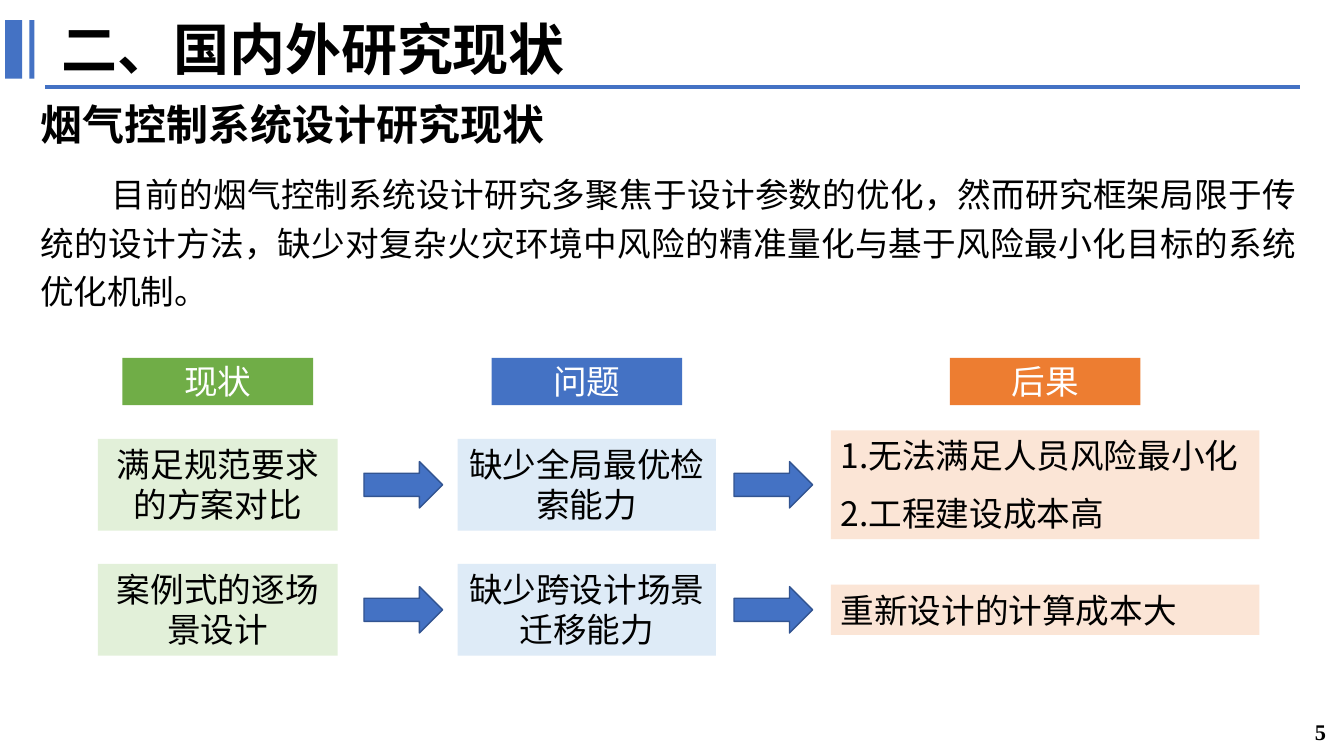
from lxml.etree import SubElement
from pptx import Presentation
from pptx.dml.color import RGBColor
from pptx.enum.shapes import MSO_CONNECTOR, MSO_SHAPE
from pptx.enum.text import MSO_ANCHOR, PP_ALIGN
from pptx.oxml.ns import qn
from pptx.util import Inches, Pt

TITLE = "二、国内外研究现状"
HEADING = "烟气控制系统设计研究现状"
BODY = "目前的烟气控制系统设计研究多聚焦于设计参数的优化，然而研究框架局限于传统的设计方法，缺少对复杂火灾环境中风险的精准量化与基于风险最小化目标的系统优化机制。"
PAGE_NUMBER = "5"
COLUMNS = [
    {"label": "现状", "left": 0.97, "width": 2.38, "strong": "green", "pale": "pale_green",
     "align": PP_ALIGN.CENTER, "rows": [["满足规范要求的方案对比"], ["案例式的逐场景设计"]]},
    {"label": "问题", "left": 4.54, "width": 2.56, "strong": "blue", "pale": "pale_blue",
     "align": PP_ALIGN.CENTER, "rows": [["缺少全局最优检索能力"], ["缺少跨设计场景迁移能力"]]},
    {"label": "后果", "left": 8.24, "width": 4.25, "strong": "orange", "pale": "pale_orange",
     "align": PP_ALIGN.JUSTIFY,
     "rows": [["1.无法满足人员风险最小化", "2.工程建设成本高"], ["重新设计的计算成本大"]]},
]
COLORS = {
    "black": "000000", "white": "FFFFFF", "blue": "4472C4", "outline": "325491",
    "green": "70AD47", "orange": "ED7D31", "pale_green": "E2F0D9",
    "pale_blue": "DEEBF7", "pale_orange": "FBE5D6",
}
SANS = "Noto Sans CJK SC"
ROW_CENTERS = [4.81, 6.05]
BOX_HEIGHTS = [[0.91, 0.91], [0.91, 0.91], [1.08, 0.5]]
LABEL_TOP, LABEL_WIDTH, LABEL_HEIGHT = 3.55, 1.89, 0.47
ARROW_LEFTS = [3.61, 7.28]
ARROW_WIDTH, ARROW_HEIGHT = 0.78, 0.46

presentation = Presentation()
presentation.slide_width = Inches(13.33)
presentation.slide_height = Inches(7.5)
slide = presentation.slides.add_slide(presentation.slide_layouts[6])


def color(name):
    return RGBColor.from_string(COLORS[name])


def write(shape, paragraphs, size=24, font=SANS, ink="black", bold=False,
          align=PP_ALIGN.LEFT, anchor=MSO_ANCHOR.TOP, spacing=None, indent=0):
    frame = shape.text_frame
    frame.word_wrap = True
    frame.vertical_anchor = anchor
    for index, text in enumerate(paragraphs):
        paragraph = frame.add_paragraph() if index else frame.paragraphs[0]
        paragraph.alignment = align
        if index:
            paragraph.space_before = Pt(12)
        if spacing:
            paragraph.line_spacing = spacing
        if indent:
            paragraph._p.get_or_add_pPr().set("indent", str(Inches(indent)))
        run = paragraph.add_run()
        run.text = text
        run.font.size = Pt(size)
        run.font.name = font
        run.font.bold = bold
        run.font.color.rgb = color(ink)
        SubElement(run._r.get_or_add_rPr(), qn("a:ea")).set("typeface", SANS)


def add_text(left, top, width, height, text, **style):
    box = slide.shapes.add_textbox(Inches(left), Inches(top), Inches(width), Inches(height))
    write(box, [text], **style)


def add_block(left, top, width, height, fill, kind=MSO_SHAPE.RECTANGLE, outline=None):
    shape = slide.shapes.add_shape(kind, Inches(left), Inches(top), Inches(width), Inches(height))
    shape.shadow.inherit = False
    shape.fill.solid()
    shape.fill.fore_color.rgb = color(fill)
    if outline:
        shape.line.color.rgb = color(outline)
        shape.line.width = Pt(1)
    else:
        shape.line.fill.background()
    return shape


add_text(0.51, 0.16, 12.8, 0.63, TITLE, size=40, bold=True, anchor=MSO_ANCHOR.MIDDLE)
for left, width in [(0.05, 0.17), (0.29, 0.05)]:
    add_block(left, 0.2, width, 0.58, "blue")
rule = slide.shapes.add_connector(
    MSO_CONNECTOR.STRAIGHT, Inches(0.45), Inches(0.86), Inches(12.89), Inches(0.86))
rule.line.color.rgb = color("blue")
rule.line.width = Pt(3)
SubElement(rule._element.spPr, qn("a:effectLst"))

add_text(0.3, 0.93, 6.18, 0.61, HEADING, size=30, font="Arial", bold=True, align=PP_ALIGN.JUSTIFY)
add_text(0.3, 1.6, 12.66, 1.51, BODY, align=PP_ALIGN.JUSTIFY, spacing=1.2, indent=0.71)

for column, heights in zip(COLUMNS, BOX_HEIGHTS):
    label_left = column["left"] + (column["width"] - LABEL_WIDTH) / 2
    label = add_block(label_left, LABEL_TOP, LABEL_WIDTH, LABEL_HEIGHT, column["strong"])
    write(label, [column["label"]], ink="white", align=PP_ALIGN.CENTER, anchor=MSO_ANCHOR.MIDDLE)
    for paragraphs, center, height in zip(column["rows"], ROW_CENTERS, heights):
        box = add_block(column["left"], center - height / 2, column["width"], height, column["pale"])
        write(box, paragraphs, align=column["align"])

for center in ROW_CENTERS:
    for left in ARROW_LEFTS:
        add_block(left, center - ARROW_HEIGHT / 2, ARROW_WIDTH, ARROW_HEIGHT, "blue",
                  kind=MSO_SHAPE.RIGHT_ARROW, outline="outline")

add_text(12.65, 7.06, 0.6, 0.4, PAGE_NUMBER, size=16, font="Times New Roman", bold=True,
         align=PP_ALIGN.RIGHT, anchor=MSO_ANCHOR.MIDDLE)

presentation.save("out.pptx")
